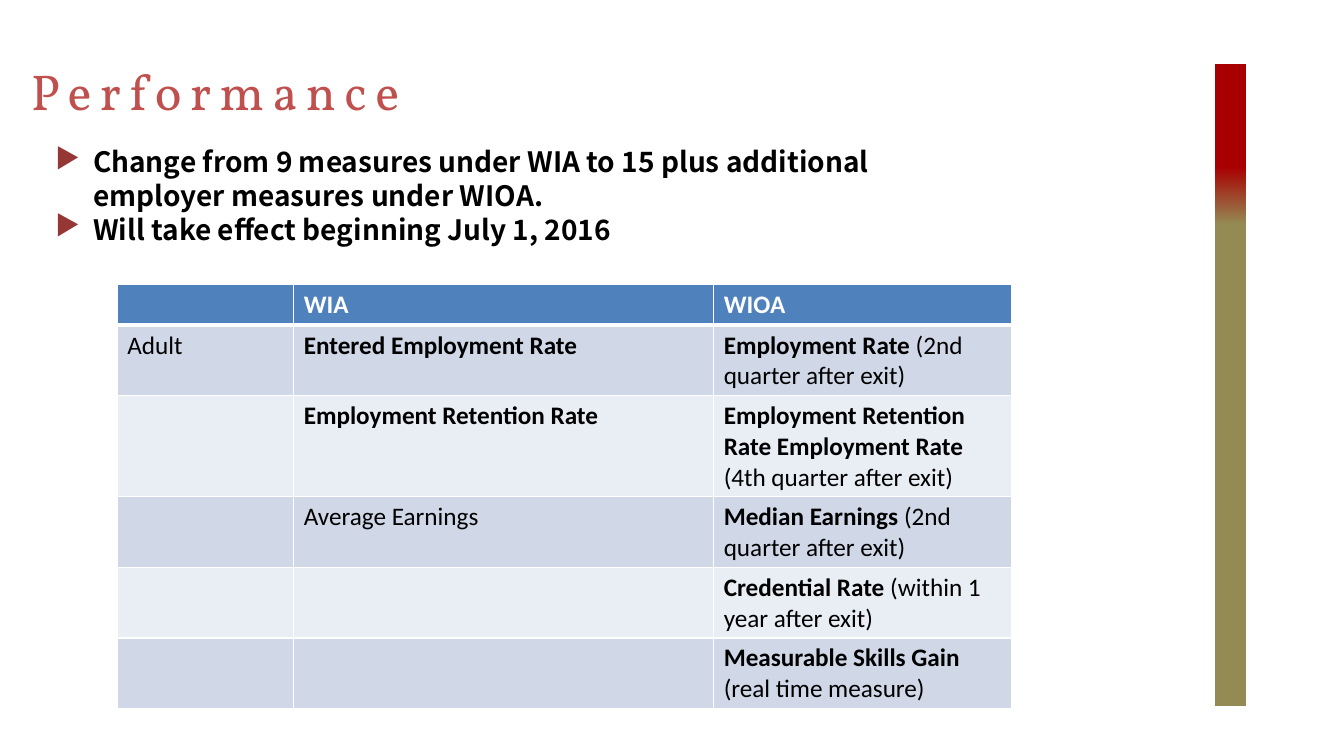
"""Build the Performance slide that compares WIA and WIOA measures."""
import copy

import lxml.etree
import pptx
import pptx.dml.color
import pptx.enum.shapes
import pptx.enum.text
import pptx.oxml.ns
import pptx.util

Pt = pptx.util.Pt
RGBColor = pptx.dml.color.RGBColor
qn = pptx.oxml.ns.qn

WHITE = RGBColor(0xFF, 0xFF, 0xFF)
BLACK = RGBColor(0x00, 0x00, 0x00)
ROSE = RGBColor(0xC0, 0x50, 0x4D)
BRICK = RGBColor(0x95, 0x37, 0x35)
RED = RGBColor(0xA8, 0x00, 0x00)
OLIVE = RGBColor(0x94, 0x8A, 0x54)
BLUE = RGBColor(0x4F, 0x81, 0xBD)
DARK = RGBColor(0xD0, 0xD8, 0xE8)
LIGHT = RGBColor(0xE9, 0xED, 0xF4)

POINTS = [
    "Change from 9 measures under WIA to 15 plus additional employer measures under WIOA.",
    "Will take effect beginning July 1, 2016",
]
HEAD = [[], [("WIA", True)], [("WIOA", True)]]
ROWS = [
    HEAD,
    [[("Adult", False)], [("Entered Employment Rate", True)],
     [("Employment Rate ", True), ("(2nd quarter after exit)", False)]],
    [[], [("Employment Retention Rate", True)],
     [("Employment Retention Rate Employment Rate ", True),
      ("(4th quarter after exit)", False)]],
    [[], [("Average Earnings", False)],
     [("Median Earnings ", True), ("(2nd quarter after exit)", False)]],
    [[], [], [("Credential Rate ", True), ("(within 1 year after exit)", False)]],
    [[], [], [("Measurable Skills Gain ", True), ("(real time measure)", False)]],
]
WIDTHS = [126, 300, 213]
HEIGHTS = [29.2, 50.4, 72.2, 50.4, 50.4, 50.4]


class Page:
    """Hold the slide and its fonts, and draw each kind of element."""

    title_font = "Vollkorn"
    list_font = "Noto Sans CJK SC"
    cell_font = "Calibri"

    def __init__(self, slide):
        self.slide = slide

    def run(self, para, text, font, size, color, bold=False):
        """Add one styled run."""
        run = para.add_run()
        run.text = text
        run.font.name = font
        run.font.size = Pt(size)
        run.font.bold = bold
        run.font.color.rgb = color
        props = run.font._element
        for tag in ("a:ea", "a:cs"):
            lxml.etree.SubElement(props, qn(tag), typeface=font)
        return run

    def frame(self, x, y, w, h):
        """Add a wrapping text box and return its frame."""
        box = self.slide.shapes.add_textbox(Pt(x), Pt(y), Pt(w), Pt(h))
        box.text_frame.word_wrap = True
        return box.text_frame

    def title(self, text, x, y, w, h):
        """Add the widely spaced title."""
        frame = self.frame(x, y, w, h)
        frame.vertical_anchor = pptx.enum.text.MSO_ANCHOR.MIDDLE
        run = self.run(frame.paragraphs[0], text, self.title_font, 36, ROSE)
        run.font._element.set("spc", "600")

    def bullets(self, lines, x, y, w, h):
        """Add a list with triangle bullets."""
        frame = self.frame(x, y, w, h)
        frame.margin_right = Pt(30)
        for i, line in enumerate(lines):
            para = frame.add_paragraph() if i else frame.paragraphs[0]
            para.line_spacing = Pt(24)
            props = para._p.get_or_add_pPr()
            props.set("marL", str(Pt(27)))
            props.set("indent", str(-Pt(27)))
            tint = lxml.etree.SubElement(props, qn("a:buClr"))
            lxml.etree.SubElement(tint, qn("a:srgbClr"), val=str(BRICK))
            lxml.etree.SubElement(props, qn("a:buChar"), char="▶")
            self.run(para, line, self.list_font, 20, BLACK, True)

    def bar(self, stops, x, y, w, h):
        """Add a bar that fades downward through the given stops."""
        shape = self.slide.shapes.add_shape(
            pptx.enum.shapes.MSO_SHAPE.RECTANGLE, Pt(x), Pt(y), Pt(w), Pt(h))
        shape.shadow.inherit = False
        shape.line.fill.background()
        shape.fill.gradient()
        shape.fill.gradient_angle = 270
        group = next(shape._element.iter(qn("a:gsLst")))
        first = group[0]
        while len(group) < len(stops):
            group.append(copy.deepcopy(first))
        for stop, (place, color) in zip(shape.fill.gradient_stops, stops):
            stop.position = place
            stop.color.rgb = color

    def border(self, cell, side, width):
        """Draw one white cell border."""
        props = cell._tc.get_or_add_tcPr()
        line = lxml.etree.SubElement(props, qn("a:ln" + side), w=str(Pt(width)))
        fill = lxml.etree.SubElement(line, qn("a:solidFill"))
        lxml.etree.SubElement(fill, qn("a:srgbClr"), val=str(WHITE))

    def table(self, rows, widths, heights, x, y):
        """Add the banded table with a heading row."""
        grid = self.slide.shapes.add_table(
            len(rows), len(widths), Pt(x), Pt(y),
            Pt(sum(widths)), Pt(sum(heights))).table
        for col, width in zip(grid.columns, widths):
            col.width = Pt(width)
        for i, (row, height) in enumerate(zip(rows, heights)):
            grid.rows[i].height = Pt(height)
            back = (DARK if i % 2 else LIGHT) if i else BLUE
            for j, runs in enumerate(row):
                cell = grid.cell(i, j)
                for side in "LRTB":
                    thick = (i, side) in ((0, "B"), (1, "T"))
                    self.border(cell, side, 3 if thick else 1)
                cell.fill.solid()
                cell.fill.fore_color.rgb = back
                para = cell.text_frame.paragraphs[0]
                para.font.size = Pt(18)
                for text, bold in runs:
                    self.run(para, text, self.cell_font, 18,
                             BLACK if i else WHITE, bold)


def main():
    """Draw the slide and save it."""
    deck = pptx.Presentation()
    deck.slide_width, deck.slide_height = Pt(960), Pt(540)
    page = Page(deck.slides.add_slide(deck.slide_layouts[6]))
    page.bullets(POINTS, 32.4, 100, 691, 124)
    page.title("Performance", 15, 33, 749, 63)
    page.bar([(0, RED), (0.16, RED), (0.25, OLIVE)], 867.6, 46, 22.3, 458)
    page.table(ROWS, WIDTHS, HEIGHTS, 83.8, 203)
    deck.save("out.pptx")


if __name__ == "__main__":
    main()
